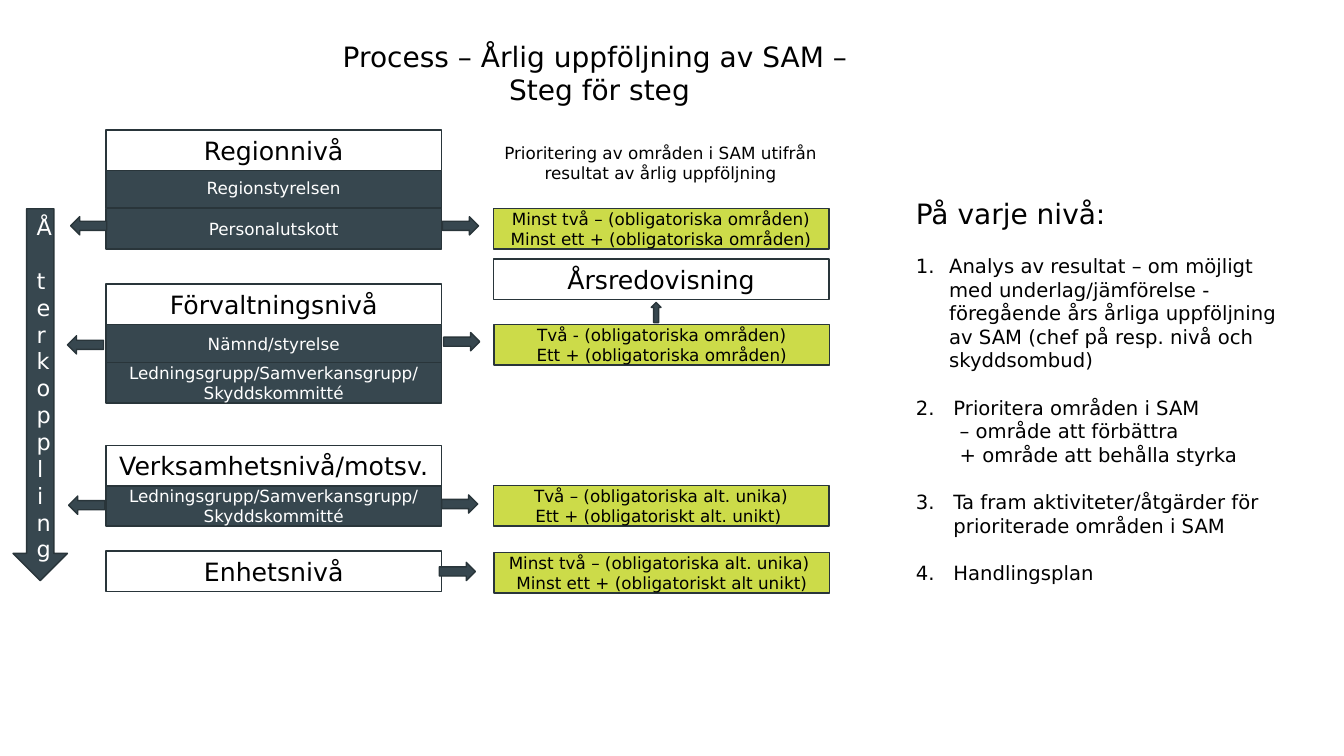
"""Build the slide on the yearly SAM follow-up process, level by level."""
from dataclasses import dataclass

from lxml import etree
from pptx import Presentation
from pptx.dml.color import RGBColor
from pptx.enum.shapes import MSO_SHAPE
from pptx.enum.text import MSO_ANCHOR, PP_ALIGN
from pptx.oxml.ns import qn
from pptx.util import Cm, Pt

RECT, DOWN, LEFT = MSO_SHAPE.RECTANGLE, MSO_SHAPE.DOWN_ARROW, MSO_SHAPE.LEFT_ARROW
CENTER, ALIGN_LEFT = PP_ALIGN.CENTER, PP_ALIGN.LEFT
TOP, MIDDLE = MSO_ANCHOR.TOP, MSO_ANCHOR.MIDDLE

TITLE = "Process – Årlig uppföljning av SAM – \vSteg för steg"
PRIORITY = "Prioritering av områden i SAM utifrån resultat av årlig uppföljning"
FEEDBACK = "Å terkoppling"
ANNUAL_REPORT = "Årsredovisning"
GROUPS = "Ledningsgrupp/Samverkansgrupp/ Skyddskommitté"

BODIES = [
    ("Regionstyrelsen", 4.22),
    ("Personalutskott", 5.26),
    ("Nämnd/styrelse", 8.15),
    (GROUPS, 9.14),
    (GROUPS, 12.24),
]
LEVELS = [
    ("Regionnivå", 3.28),
    ("Förvaltningsnivå", 7.16),
    ("Verksamhetsnivå/motsv.", 11.23),
    ("Enhetsnivå", 13.89),
]
RESULTS = [
    ("Minst två – (obligatoriska områden)\nMinst ett + (obligatoriska områden)", 12.43, 5.26),
    ("Två - (obligatoriska områden)\nEtt + (obligatoriska områden)", 12.45, 8.18),
    ("Två – (obligatoriska alt. unika)\nEtt + (obligatoriskt alt. unikt) ", 12.43, 12.24),
    ("Minst två – (obligatoriska alt. unika) \nMinst ett + (obligatoriskt alt unikt)", 12.45, 13.92),
]
TO_FEEDBACK = [(1.78, 5.46), (1.7, 8.46), (1.73, 12.5)]
TO_RESULT = [(11.15, 5.46), (11.18, 8.38), (11.13, 12.47), (11.07, 14.17)]

STEPS_HEADING = "På varje nivå:"
STEPS = [
    ("Analys av resultat – om möjligt med underlag/jämförelse - föregående års "
     "årliga uppföljning av SAM (chef på resp. nivå och skyddsombud)", 0.84),
    ("Prioritera områden i SAM \v – område att förbättra\v + område att behålla styrka", 0.95),
    ("Ta fram aktiviteter/åtgärder för prioriterade områden i SAM", 0.95),
    ("Handlingsplan", 0.95),
]

LEVEL_X, BOX_W, BOX_H = 2.67, 8.46, 1.02
ARROW_W, ARROW_H = 0.91, 0.46


@dataclass(frozen=True)
class Theme:
    font: str = "DejaVu Sans"
    dark: RGBColor = RGBColor(0x37, 0x47, 0x4F)
    edge: RGBColor = RGBColor(0x29, 0x35, 0x3A)
    lime: RGBColor = RGBColor(0xCC, 0xDB, 0x49)
    white: RGBColor = RGBColor(0xFF, 0xFF, 0xFF)
    black: RGBColor = RGBColor(0, 0, 0)
    title: int = 20
    level: int = 18
    feedback: int = 16
    step: int = 14
    body: int = 12


THEME = Theme()


def style(p, size, color, align):
    p.alignment = align
    for r in p.runs:
        r.font.name = THEME.font
        r.font.size = Pt(size)
        r.font.color.rgb = color


def write(tf, text, size, color, anchor):
    tf.word_wrap = True
    tf.vertical_anchor = anchor
    tf.text = text
    for p in tf.paragraphs:
        style(p, size, color, CENTER)


def add_block(s, kind, x, y, w, h, fill, text="", size=THEME.body, color=THEME.black):
    sp = s.shapes.add_shape(kind, Cm(x), Cm(y), Cm(w), Cm(h))
    sp.shadow.inherit = False
    if fill is None:
        sp.fill.background()
    else:
        sp.fill.solid()
        sp.fill.fore_color.rgb = fill
    sp.line.color.rgb = THEME.edge
    sp.line.width = Pt(1)
    if text:
        write(sp.text_frame, text, size, color, MIDDLE)
    return sp


def add_arrow(s, x, y, w=ARROW_W, h=ARROW_H, rotation=0):
    add_block(s, LEFT, x, y, w, h, THEME.dark).rotation = rotation


def add_label(s, x, y, w, h, text, size):
    sp = s.shapes.add_textbox(Cm(x), Cm(y), Cm(w), Cm(h))
    write(sp.text_frame, text, size, THEME.black, TOP)
    return sp.text_frame


def add_steps(s):
    tf = add_label(s, 22.83, 4.83, 9.91, 10.08, STEPS_HEADING, THEME.title)
    tf.paragraphs[0].alignment = ALIGN_LEFT
    for text, indent in STEPS:
        p = tf.add_paragraph()
        p.text = text
        p.space_before = Pt(17)
        pPr = p._p.get_or_add_pPr()
        pPr.set("marL", str(Cm(indent)))
        pPr.set("indent", str(-Cm(indent)))
        etree.SubElement(pPr, qn("a:buFont"), typeface="+mj-lt")
        etree.SubElement(pPr, qn("a:buAutoNum"), type="arabicPeriod")
        style(p, THEME.step, THEME.black, ALIGN_LEFT)


def main():
    prs = Presentation()
    prs.slide_width, prs.slide_height = Cm(33.87), Cm(19.05)
    s = prs.slides.add_slide(prs.slide_layouts[6])

    for text, y in BODIES:
        add_block(s, RECT, LEVEL_X, y, BOX_W, BOX_H, THEME.dark, text, color=THEME.white)
    for text, y in LEVELS:
        add_block(s, RECT, LEVEL_X, y, BOX_W, BOX_H, THEME.white, text, THEME.level)
    for text, x, y in RESULTS:
        add_block(s, RECT, x, y, BOX_W, BOX_H, THEME.lime, text)
    add_block(s, RECT, 12.43, 6.53, BOX_W, BOX_H, None, ANNUAL_REPORT, THEME.level)
    add_block(s, DOWN, 0.33, 5.26, 1.37, 9.37, THEME.dark, FEEDBACK, THEME.feedback, THEME.white)

    for x, y in TO_FEEDBACK:
        add_arrow(s, x, y)
    for x, y in TO_RESULT:
        add_arrow(s, x, y, rotation=180)
    add_arrow(s, 16.28, 7.75, 0.51, 0.25, 90)

    add_label(s, 6.65, 0.86, 16.92, 1.96, TITLE, THEME.title)
    add_label(s, 12.27, 3.48, 8.76, 1.27, PRIORITY, THEME.body)
    add_steps(s)
    prs.save("out.pptx")


if __name__ == "__main__":
    main()
